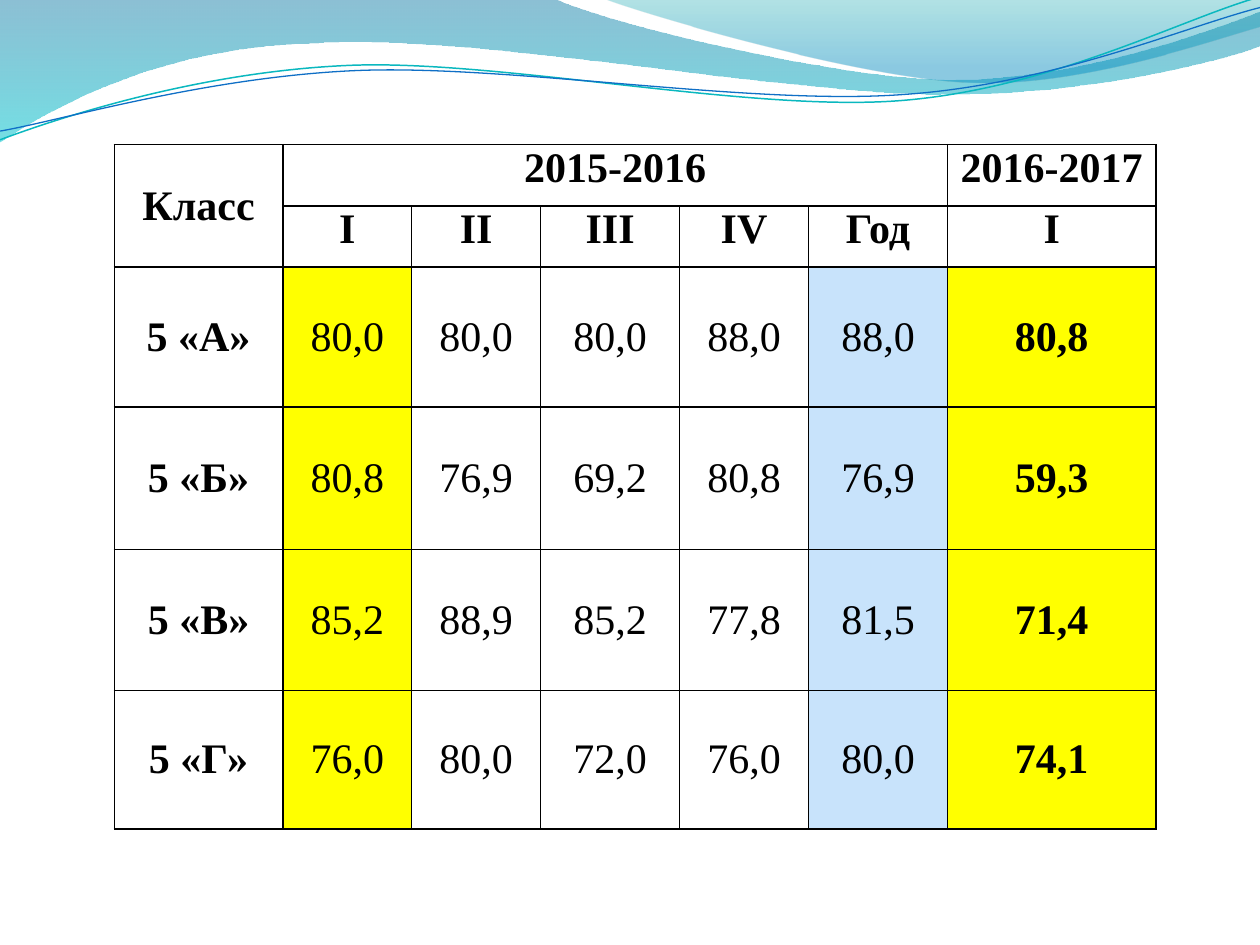
from lxml.etree import SubElement
from pptx import Presentation
from pptx.dml.color import RGBColor
from pptx.enum.text import MSO_ANCHOR as Anchor, PP_ALIGN as Align
from pptx.oxml.ns import qn
from pptx.util import Pt

FONT = "Times New Roman"
BLACK, YELLOW, BLUE = "000000", "FFFF00", "C8E3FB"
COLUMN_WIDTHS = [96.3, 73.7, 73.7, 79.4, 73.7, 79.4, 119.1]
ROW_HEIGHTS = [35, 35, 80, 81.5, 80.5, 79]
COLUMN_FILLS = {1: YELLOW, 5: BLUE, 6: YELLOW}
MERGES = [(0, 0, 1, 0), (0, 1, 0, 5)]
ROWS = [
    ["Класс", "2015-2016", "", "", "", "", "2016-2017"],
    ["", "I", "II", "III", "IV", "Год", "I"],
    ["5 «А»", "80,0", "80,0", "80,0", "88,0", "88,0", "80,8"],
    ["5 «Б»", "80,8", "76,9", "69,2", "80,8", "76,9", "59,3"],
    ["5 «В»", "85,2", "88,9", "85,2", "77,8", "81,5", "71,4"],
    ["5 «Г»", "76,0", "80,0", "72,0", "76,0", "80,0", "74,1"],
]

BROAD_WAVE = [
    (0, 0), (316.8, -0.7),
    (342.7, 12.2, 478.1, 45.4, 545.8, 45.4),
    (614.2, 45.4, 689.8, 18.7, 720, 6.5),
    (720.7, 25.9),
    (707.8, 31.7, 626.4, 54.7, 537.1, 54),
    (447.8, 54, 275, 20.2, 185, 24.5),
    (92.9, 25.9, 33.1, 59.8, -0.7, 81.4),
]
RIGHT_WAVE = [
    (344.9, -0.7),
    (366.5, 7.9, 491, 44.6, 553.7, 46.8),
    (616.3, 49.7, 691.9, 23, 720, 15.1),
    (720, 0),
]
TEAL_LINE = [
    (0, 79.9),
    (34.6, 67, 113.8, 41, 199.4, 37.4),
    (284.4, 33.8, 427, 64.1, 513.4, 57.6),
    (599.8, 51.1, 675.4, 10.8, 718.6, -1.4),
]
BLUE_LINE = [
    (0, 74.9),
    (33.8, 69.1, 118.1, 43.9, 203.8, 40.3),
    (290.2, 36.7, 429.8, 60.5, 516.2, 54),
    (601.9, 48.2, 677.5, 15.1, 720, 4.3),
]


def color(value):
    return RGBColor.from_string(value)


class SlideBuilder:
    def __init__(self, slide, font, size):
        self.slide = slide
        self.font = font
        self.size = size

    def outline(self, segments, close):
        ends = [(Pt(segment[-2]), Pt(segment[-1])) for segment in segments]
        builder = self.slide.shapes.build_freeform(*ends[0])
        builder.add_line_segments(ends[1:], close=close)
        shape = builder.convert_to_shape()
        shape.shadow.inherit = False
        lines = list(shape.element.iter(qn("a:lnTo")))
        for line, segment in zip(lines, segments[1:]):
            if len(segment) == 6:
                line.tag = qn("a:cubicBezTo")
                line.clear()
                for x, y in zip(segment[::2], segment[1::2]):
                    SubElement(line, qn("a:pt"), x=str(Pt(x) - shape.left), y=str(Pt(y) - shape.top))
        return shape

    def wave(self, segments, stops):
        shape = self.outline(segments, True)
        shape.line.fill.background()
        shape.fill.gradient()
        shape.fill.gradient_angle = 270
        for stop, (position, value, _) in zip(shape.fill.gradient_stops, stops):
            stop.position = position
            stop.color.rgb = color(value)
        for element, (_, _, opacity) in zip(shape.element.iter(qn("a:srgbClr")), stops):
            SubElement(element, qn("a:alpha"), val=str(opacity * 1000))

    def curve(self, segments, value, width):
        shape = self.outline(segments, False)
        shape.fill.background()
        shape.line.color.rgb = color(value)
        shape.line.width = Pt(width)

    def border(self, cell):
        properties = cell._tc.get_or_add_tcPr()
        for side in ("L", "R", "T", "B"):
            line = SubElement(properties, qn(f"a:ln{side}"), w=str(Pt(1)))
            fill = SubElement(line, qn("a:solidFill"))
            SubElement(fill, qn("a:srgbClr"), val=BLACK)

    def cell(self, cell, text, bold, anchor, fill):
        self.border(cell)
        if fill:
            cell.fill.solid()
            cell.fill.fore_color.rgb = color(fill)
        else:
            cell.fill.background()
        cell.margin_left = cell.margin_right = Pt(5)
        cell.margin_top = cell.margin_bottom = 0
        cell.vertical_anchor = anchor
        cell.text = text
        paragraph = cell.text_frame.paragraphs[0]
        paragraph.alignment = Align.CENTER
        paragraph.font.name = self.font
        paragraph.font.size = Pt(self.size)
        paragraph.font.bold = bold
        paragraph.font.color.rgb = color(BLACK)

    def table(self, left, top):
        frame = self.slide.shapes.add_table(
            len(ROWS), len(COLUMN_WIDTHS), Pt(left), Pt(top),
            Pt(sum(COLUMN_WIDTHS)), Pt(sum(ROW_HEIGHTS)),
        )
        table = frame.table
        table.first_row = table.horz_banding = False
        for column, width in zip(table.columns, COLUMN_WIDTHS):
            column.width = Pt(width)
        for row, height in zip(table.rows, ROW_HEIGHTS):
            row.height = Pt(height)
        for r, texts in enumerate(ROWS):
            header = r < 2
            for c, text in enumerate(texts):
                self.cell(
                    table.cell(r, c), text,
                    bold=header or c in (0, 6),
                    anchor=Anchor.TOP if header and c else Anchor.MIDDLE,
                    fill=None if header else COLUMN_FILLS.get(c),
                )
        for top_row, first, bottom_row, last in MERGES:
            table.cell(top_row, first).merge(table.cell(bottom_row, last))


def main():
    presentation = Presentation()
    presentation.slide_width, presentation.slide_height = Pt(720), Pt(540)
    slide = presentation.slides.add_slide(presentation.slide_layouts[6])
    builder = SlideBuilder(slide, FONT, 24)
    builder.wave(BROAD_WAVE, [(0, "0074A1", 45), (1, "00C6CF", 55)])
    builder.wave(RIGHT_WAVE, [(0, "00A1A9", 30), (0.8, "008BBF", 45)])
    builder.curve(TEAL_LINE, "0AB8BF", 0.85)
    builder.curve(BLUE_LINE, "0F6FC6", 0.75)
    builder.table(65.3, 82.7)
    presentation.save("out.pptx")


if __name__ == "__main__":
    main()
